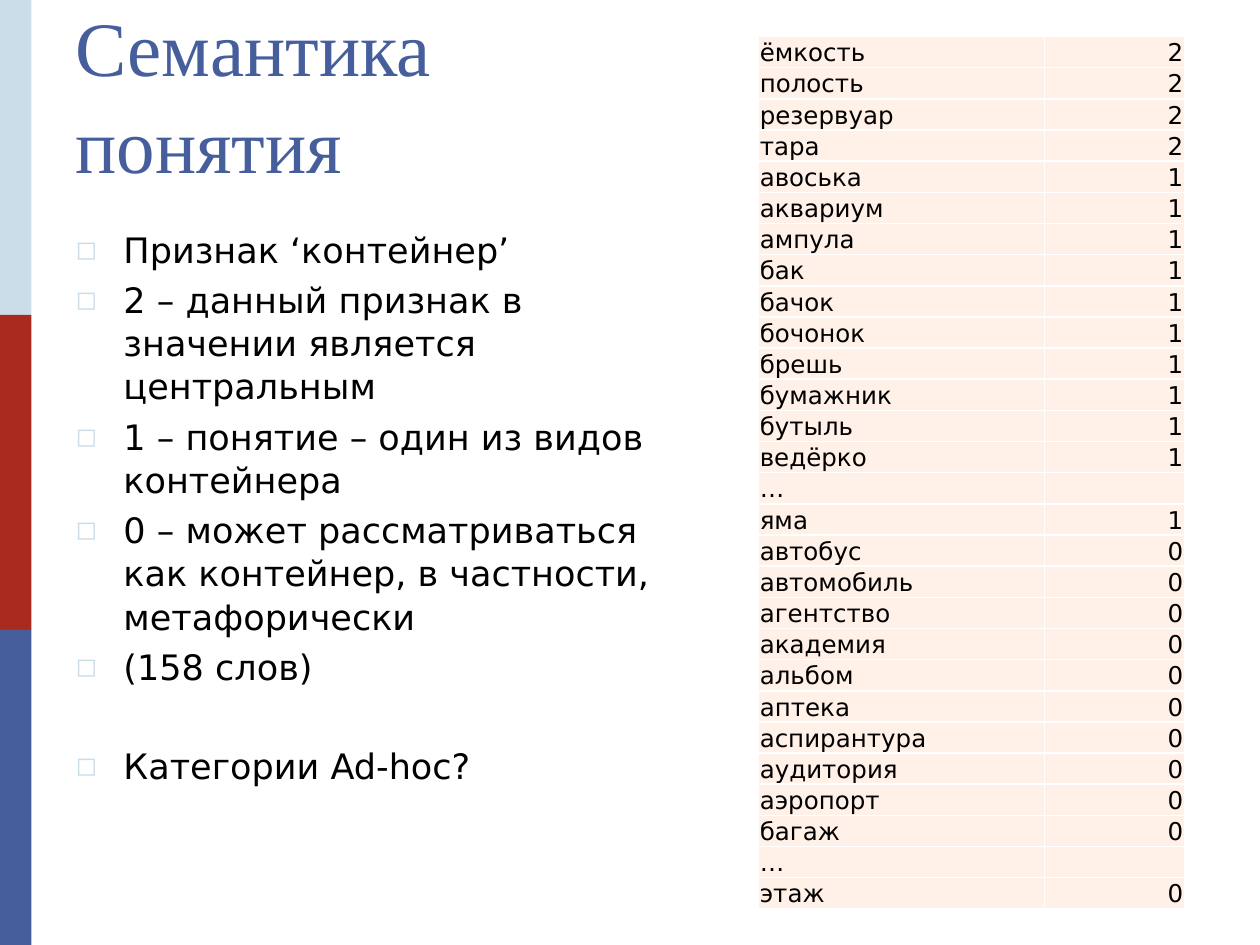
from dataclasses import dataclass

from lxml import etree
from pptx import Presentation
from pptx.dml.color import RGBColor
from pptx.enum.shapes import MSO_SHAPE
from pptx.enum.text import MSO_ANCHOR, MSO_AUTO_SIZE, PP_ALIGN
from pptx.oxml.ns import qn
from pptx.util import Inches, Pt

RECTANGLE = MSO_SHAPE.RECTANGLE
TOP, BOTTOM = MSO_ANCHOR.TOP, MSO_ANCHOR.BOTTOM
LEFT, RIGHT = PP_ALIGN.LEFT, PP_ALIGN.RIGHT
NO_AUTOFIT = MSO_AUTO_SIZE.NONE


@dataclass(frozen=True)
class Theme:
    pale_blue: str = "CCDDEA"
    red: str = "AA2B1E"
    blue: str = "465E9C"
    text: str = "000000"
    cell: str = "FFF0E8"
    border: str = "FFFFFF"
    title_font: str = "Times New Roman"
    body_font: str = "DejaVu Sans"
    title_size: int = 44
    body_size: int = 20
    table_size: int = 14


theme = Theme()


def set_font(paragraph, name, size, color):
    paragraph.font.name = name
    paragraph.font.size = Pt(size)
    paragraph.font.color.rgb = RGBColor.from_string(color)


def add_element(parent, tag, **attributes):
    return etree.SubElement(parent, qn(tag), attributes)


presentation = Presentation()
presentation.slide_width = Inches(10)
presentation.slide_height = Inches(7.5)
slide = presentation.slides.add_slide(presentation.slide_layouts[1])

# Colour bars down the left edge
for index, color in enumerate((theme.pale_blue, theme.red, theme.blue)):
    bar = slide.shapes.add_shape(
        RECTANGLE, 0, Inches(2.5 * index), Inches(0.25), Inches(2.5))
    bar.shadow.inherit = False
    bar.fill.solid()
    bar.fill.fore_color.rgb = RGBColor.from_string(color)
    bar.line.fill.background()

# Title
title = slide.shapes.title
title.left, title.top = Inches(0.5), Inches(0.3)
title.width, title.height = Inches(9), Inches(1.25)
title.text_frame.text = "Семантика \vпонятия"
title.text_frame.auto_size = NO_AUTOFIT
title.text_frame.vertical_anchor = BOTTOM
heading = title.text_frame.paragraphs[0]
heading.alignment = LEFT
heading.line_spacing = 1.05
set_font(heading, theme.title_font, theme.title_size, theme.blue)

# Bulleted list: text and space before in points
points = [
    ("Признак ‘контейнер’", 4),
    ("2 – данный признак в значении является центральным", 4),
    ("1 – понятие – один из видов контейнера", 4),
    ("0 – может рассматриваться как контейнер, в частности, метафорически", 4),
    ("(158 слов)", 4),
    ("Категории Ad-hoc?", 32),
]
body = slide.placeholders[1]
body.left, body.top = Inches(0.5), Inches(1.75)
body.width, body.height = Inches(4.81), Inches(4.95)
body.text_frame.text = "\n".join(text for text, _ in points)
body.text_frame.auto_size = NO_AUTOFIT
body.text_frame.vertical_anchor = TOP
for paragraph, (_, space_before) in zip(body.text_frame.paragraphs, points):
    paragraph.space_before = Pt(space_before)
    paragraph.line_spacing = 1.03
    properties = paragraph._p.get_or_add_pPr()
    properties.set("marL", str(Inches(0.38)))
    properties.set("indent", str(-Inches(0.38)))
    bullet_color = add_element(properties, "a:buClr")
    add_element(bullet_color, "a:srgbClr", val=theme.pale_blue)
    add_element(properties, "a:buSzPct", val="75000")
    add_element(properties, "a:buFont", typeface=theme.body_font)
    add_element(properties, "a:buChar", char="◻")
    set_font(paragraph, theme.body_font, theme.body_size, theme.text)

# Word table: words grouped by score, "…" marks omitted words
word_groups = [
    ("2", "ёмкость полость резервуар тара"),
    ("1", "авоська аквариум ампула бак бачок бочонок брешь бумажник "
          "бутыль ведёрко … яма"),
    ("0", "автобус автомобиль агентство академия альбом аптека аспирантура "
          "аудитория аэропорт багаж … этаж"),
]
rows = [(word, "" if word == "…" else score)
        for score, words in word_groups for word in words.split()]
table = slide.shapes.add_table(
    len(rows), 2, Inches(6.02), Inches(0.29), Inches(3.38), Inches(6.93)).table
table.first_row = False
table.horz_banding = False
table.columns[0].width = Inches(2.27)
table.columns[1].width = Inches(1.11)

for row_index, row in enumerate(rows):
    for column_index, text in enumerate(row):
        cell = table.cell(row_index, column_index)
        cell.text = text
        cell.vertical_anchor = BOTTOM
        cell.margin_left = cell.margin_right = cell.margin_top = Inches(0.01)
        cell.margin_bottom = 0
        paragraph = cell.text_frame.paragraphs[0]
        paragraph.alignment = RIGHT if column_index else LEFT
        set_font(paragraph, theme.body_font, theme.table_size, theme.text)
        if not text:
            # An empty cell takes its line height from the end mark
            add_element(paragraph._p, "a:endParaRPr",
                        sz=str(theme.table_size * 100))
        # Borders come before the fill in the cell properties
        for side in ("a:lnL", "a:lnR", "a:lnT", "a:lnB"):
            line = add_element(cell._tc.get_or_add_tcPr(), side, w=str(Pt(1)))
            line_fill = add_element(line, "a:solidFill")
            add_element(line_fill, "a:srgbClr", val=theme.border)
        cell.fill.solid()
        cell.fill.fore_color.rgb = RGBColor.from_string(theme.cell)

presentation.save("out.pptx")
